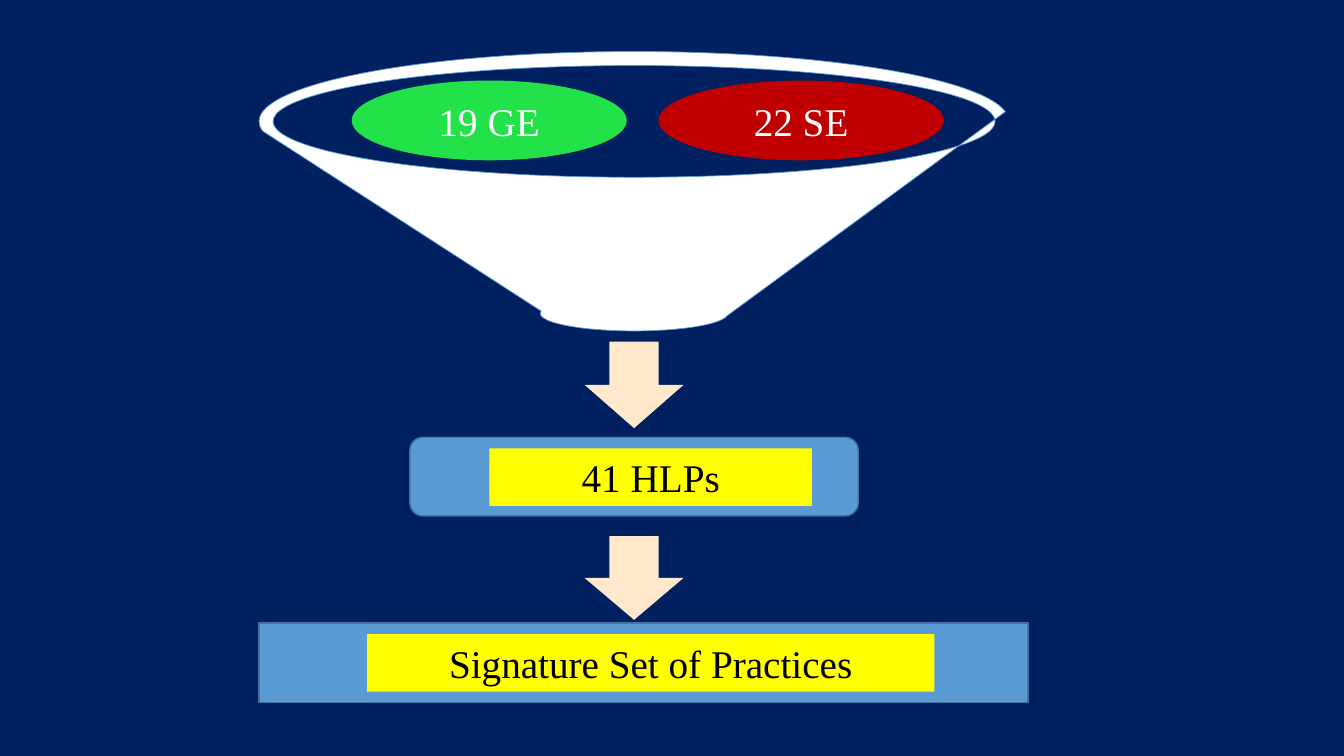
"""Build a slide where two sets of practices pass through a funnel into one."""
from dataclasses import dataclass

from pptx import Presentation
from pptx.dml.color import RGBColor
from pptx.enum.shapes import MSO_SHAPE
from pptx.enum.text import MSO_ANCHOR, PP_ALIGN
from pptx.util import Cm, Pt

FUNNEL = MSO_SHAPE.FUNNEL
OVAL = MSO_SHAPE.OVAL
ARROW = MSO_SHAPE.DOWN_ARROW
ROUND = MSO_SHAPE.ROUNDED_RECTANGLE
RECT = MSO_SHAPE.RECTANGLE
MIDDLE = MSO_ANCHOR.MIDDLE
CENTER = PP_ALIGN.CENTER

NAVY, WHITE, BLACK = "002060", "FFFFFF", "000000"
GREEN, RED, CREAM = "23E148", "C00000", "FFE8CC"
BLUE, STEEL, YELLOW = "5B9BD5", "43739E", "FFFF00"

FRAME = {"word_wrap": True, "vertical_anchor": MIDDLE,
         "margin_left": Cm(0.08), "margin_right": Cm(0.08),
         "margin_top": Cm(0.08), "margin_bottom": Cm(0.08)}
FONT = {"name": "Times New Roman", "size": Pt(28)}

AXIS = 15.98
LABEL_AXIS = 16.4
OVAL_TOP, OVAL_TALL = 2.03, 2.01
LABEL_TALL = 1.45


@dataclass
class Part:
    """A filled shape placed by its middle, top and size in centimetres."""
    kind: MSO_SHAPE
    mid: float
    top: float
    wide: float
    tall: float
    fill: str
    line: str = ""
    width: float = 1
    text: str = ""
    ink: str = BLACK


PARTS = [
    Part(FUNNEL, AXIS, 1.3, 18.9, 7.04, WHITE, BLUE, 0.5),
    Part(OVAL, 12.33, OVAL_TOP, 6.93, OVAL_TALL, GREEN, text="19 GE", ink=WHITE),
    Part(OVAL, 20.19, OVAL_TOP, 7.19, OVAL_TALL, RED, text="22 SE", ink=WHITE),
    Part(ARROW, AXIS, 8.61, 2.49, 2.18, CREAM),
    Part(ROUND, AXIS, 11.02, 11.3, 1.98, BLUE, STEEL),
    Part(RECT, LABEL_AXIS, 11.3, 8.13, LABEL_TALL, YELLOW, text="41 HLPs"),
    Part(ARROW, AXIS, 13.51, 2.49, 2.11, CREAM),
    Part(RECT, 16.22, 15.7, 19.38, 2.01, BLUE, STEEL),
    Part(RECT, LABEL_AXIS, 15.98, 14.3, LABEL_TALL, YELLOW,
         text="Signature Set of Practices"),
]


def paint(fill, tone: str) -> None:
    """Give a fill one solid colour from a hex string."""
    fill.solid()
    fill.fore_color.rgb = RGBColor.from_string(tone)


def format_with(item, values: dict) -> None:
    """Set each attribute named in the dict."""
    for key, value in values.items():
        setattr(item, key, value)


def write(shape, text: str, ink: str) -> None:
    """Write one centred line of text in a shape."""
    frame = shape.text_frame
    format_with(frame, FRAME)
    line = frame.paragraphs[0]
    line.alignment = CENTER
    run = line.add_run()
    run.text = text
    format_with(run.font, FONT)
    paint(run.font.fill, ink)


def draw(slide, part: Part) -> None:
    """Draw one part on the slide."""
    shape = slide.shapes.add_shape(
        part.kind, Cm(part.mid - part.wide / 2), Cm(part.top),
        Cm(part.wide), Cm(part.tall))
    shape.shadow.inherit = False
    paint(shape.fill, part.fill)
    if part.line:
        paint(shape.line.fill, part.line)
        shape.line.width = Pt(part.width)
    else:
        shape.line.fill.background()
    if part.text:
        write(shape, part.text, part.ink)


def main() -> None:
    """Build the slide and save it."""
    deck = Presentation()
    deck.slide_width, deck.slide_height = Cm(33.87), Cm(19.05)
    slide = deck.slides.add_slide(deck.slide_layouts[6])
    paint(slide.background.fill, NAVY)
    for part in PARTS:
        draw(slide, part)
    deck.save("out.pptx")


if __name__ == "__main__":
    main()
